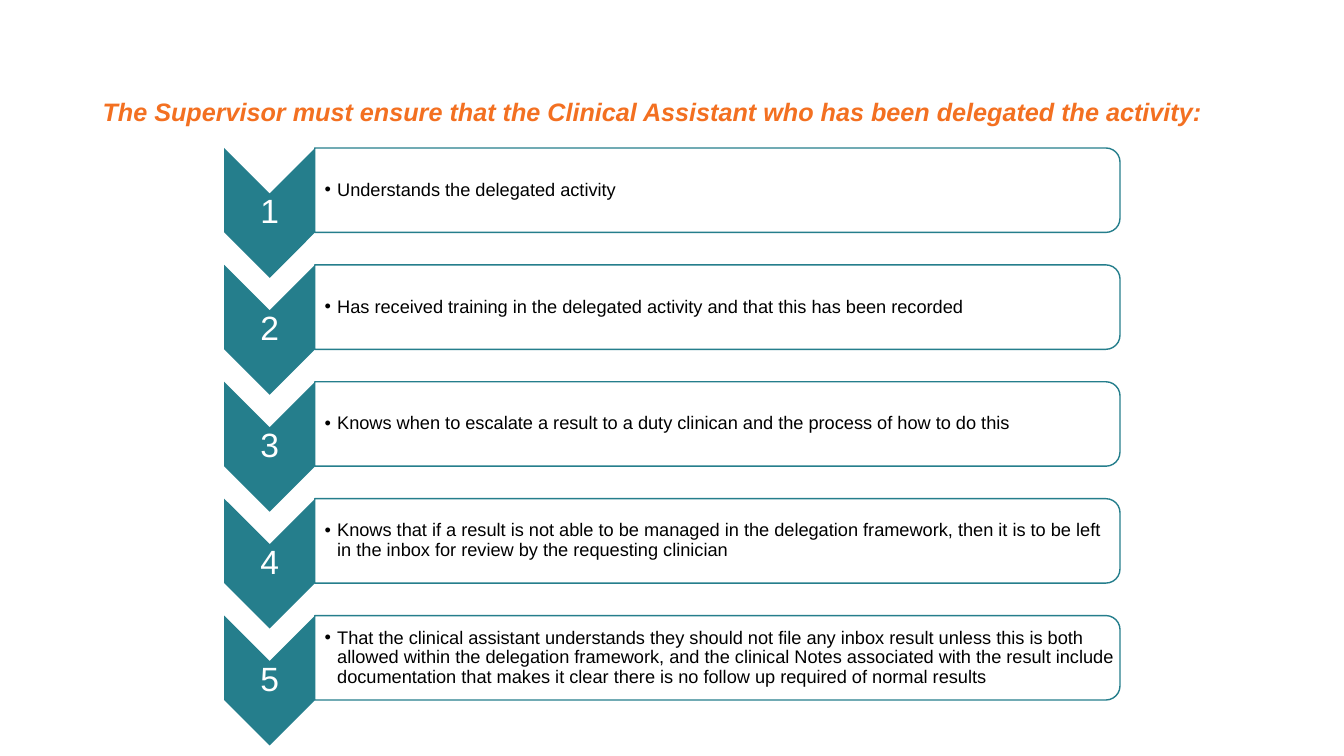
from dataclasses import dataclass

from lxml.etree import SubElement
from pptx import Presentation
from pptx.dml.color import RGBColor as Color
from pptx.enum.shapes import MSO_SHAPE as Shape
from pptx.enum.text import MSO_ANCHOR as Anchor, PP_ALIGN as Align
from pptx.oxml.ns import qn
from pptx.util import Pt


@dataclass(frozen=True)
class Theme:
    font: str = "Arial"
    orange: str = "F37021"
    teal: str = "257E8C"
    white: str = "FFFFFF"
    black: str = "000000"
    title_size: float = 18
    number_size: float = 24
    body_size: float = 13


class SlideBuilder:
    def __init__(self, page, theme):
        self.page = page
        self.theme = theme

    def turned_shape(self, kind, left, top, width, height, fill, line=None, opacity=None):
        """Add a shape turned by 90 degrees that covers the given area."""
        shift = (width - height) / 2
        shape = self.page.shapes.add_shape(
            kind, Pt(left + shift), Pt(top - shift), Pt(height), Pt(width))
        shape.rotation = 90
        shape.shadow.inherit = False
        shape.fill.solid()
        shape.fill.fore_color.rgb = Color.from_string(fill)
        if opacity is not None:
            color = shape.fill._xPr.find(qn("a:solidFill"))[0]
            SubElement(color, qn("a:alpha"), val=str(opacity * 1000))
        if line:
            shape.line.color.rgb = Color.from_string(line)
            shape.line.width = Pt(1)
        else:
            shape.line.fill.background()

    def text(self, text, left, top, width, height, size, color, insets,
             align=Align.LEFT, bullet_indent=None, emphasis=False):
        box = self.page.shapes.add_textbox(Pt(left), Pt(top), Pt(width), Pt(height))
        frame = box.text_frame
        frame.word_wrap = True
        frame.vertical_anchor = Anchor.MIDDLE
        (frame.margin_left, frame.margin_top,
         frame.margin_right, frame.margin_bottom) = [Pt(inset) for inset in insets]
        frame.text = text
        para = frame.paragraphs[0]
        para.alignment = align
        para.line_spacing = 0.9
        if bullet_indent:
            properties = para._p.get_or_add_pPr()
            properties.set("marL", str(Pt(bullet_indent)))
            properties.set("indent", str(-Pt(bullet_indent)))
            SubElement(properties, qn("a:buFont"), typeface=self.theme.font)
            SubElement(properties, qn("a:buChar"), char="•")
        font = para.runs[0].font
        font.name = self.theme.font
        font.size = Pt(size)
        font.color.rgb = Color.from_string(color)
        font.bold = font.italic = emphasis

    def title(self, text):
        self.text(text, 66.2, 28.8, 828, 104.4, self.theme.title_size,
                  self.theme.orange, (7.2, 3.6, 7.2, 3.6), emphasis=True)

    def step(self, number, text, top):
        theme = self.theme
        left, chevron_width, chevron_height = 160.1, 65, 92.8
        panel_left, panel_width, panel_height = 224.8, 575.2, 60.3
        number_height, text_height = 28, 54

        # Numbered chevron
        self.turned_shape(Shape.CHEVRON, left, top, chevron_width, chevron_height, theme.teal)
        self.text(str(number), left, top + (chevron_height - number_height) / 2,
                  chevron_width, number_height, theme.number_size, theme.white,
                  (1.2,) * 4, align=Align.CENTER)

        # Requirement panel
        self.turned_shape(Shape.ROUND_2_SAME_RECTANGLE, panel_left, top, panel_width,
                          panel_height, theme.white, line=theme.teal, opacity=90)
        self.text(text, panel_left, top + (panel_height - text_height) / 2,
                  panel_width - 3, text_height, theme.body_size, theme.black,
                  (7.2, 0.6, 0.6, 0.6), bullet_indent=9)


REQUIREMENTS = [
    "Understands the delegated activity",
    "Has received training in the delegated activity and that this has been recorded",
    "Knows when to escalate a result to a duty clinican and the process of how to do this",
    "Knows that if a result is not able to be managed in the delegation framework, "
    "then it is to be left in the inbox for review by the requesting clinician",
    "That the clinical assistant understands they should not file any inbox result "
    "unless this is both allowed within the delegation framework, and the clinical "
    "Notes associated with the result include documentation that makes it clear "
    "there is no follow up required of normal results",
]
FIRST_TOP, STEP_PITCH = 105.7, 83.5


def main():
    deck = Presentation()
    deck.slide_width, deck.slide_height = Pt(960), Pt(540)
    page = deck.slides.add_slide(deck.slide_layouts[6])
    builder = SlideBuilder(page, Theme())

    # Heading
    builder.title("The Supervisor must ensure that the Clinical Assistant "
                  "who has been delegated the activity:")

    # Five steps at an equal pitch
    for index, requirement in enumerate(REQUIREMENTS):
        builder.step(index + 1, requirement, FIRST_TOP + index * STEP_PITCH)

    deck.save("out.pptx")


if __name__ == "__main__":
    main()
